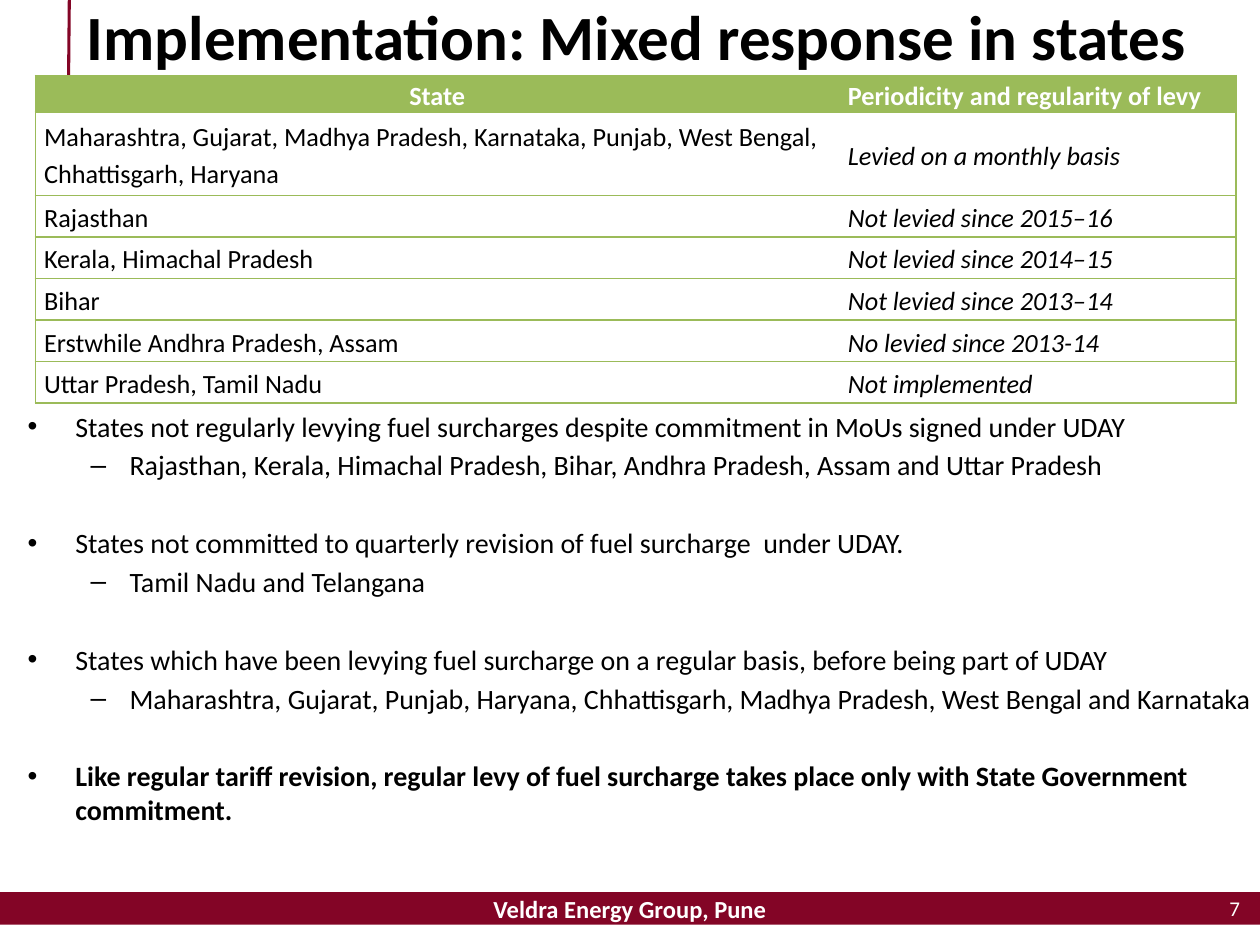
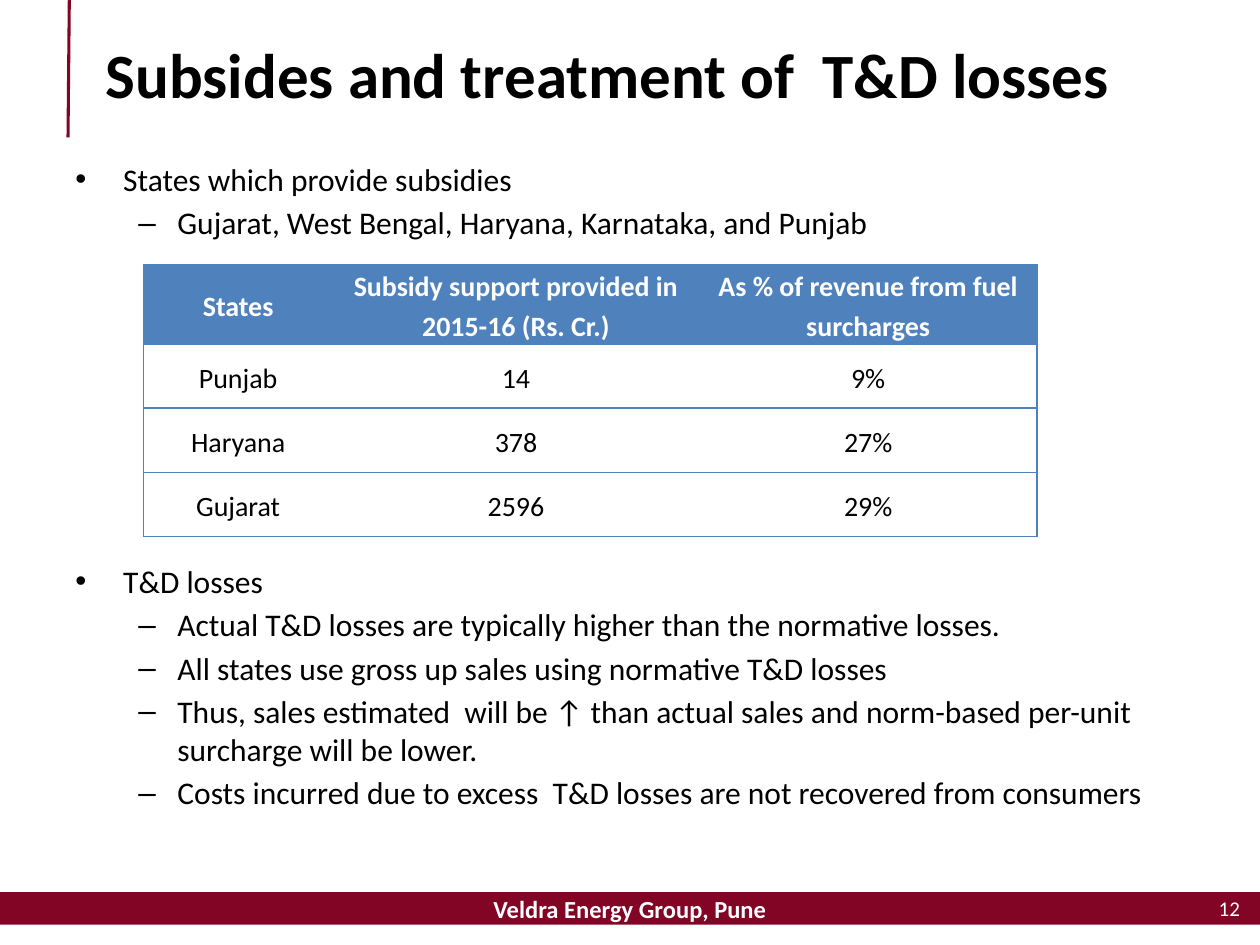
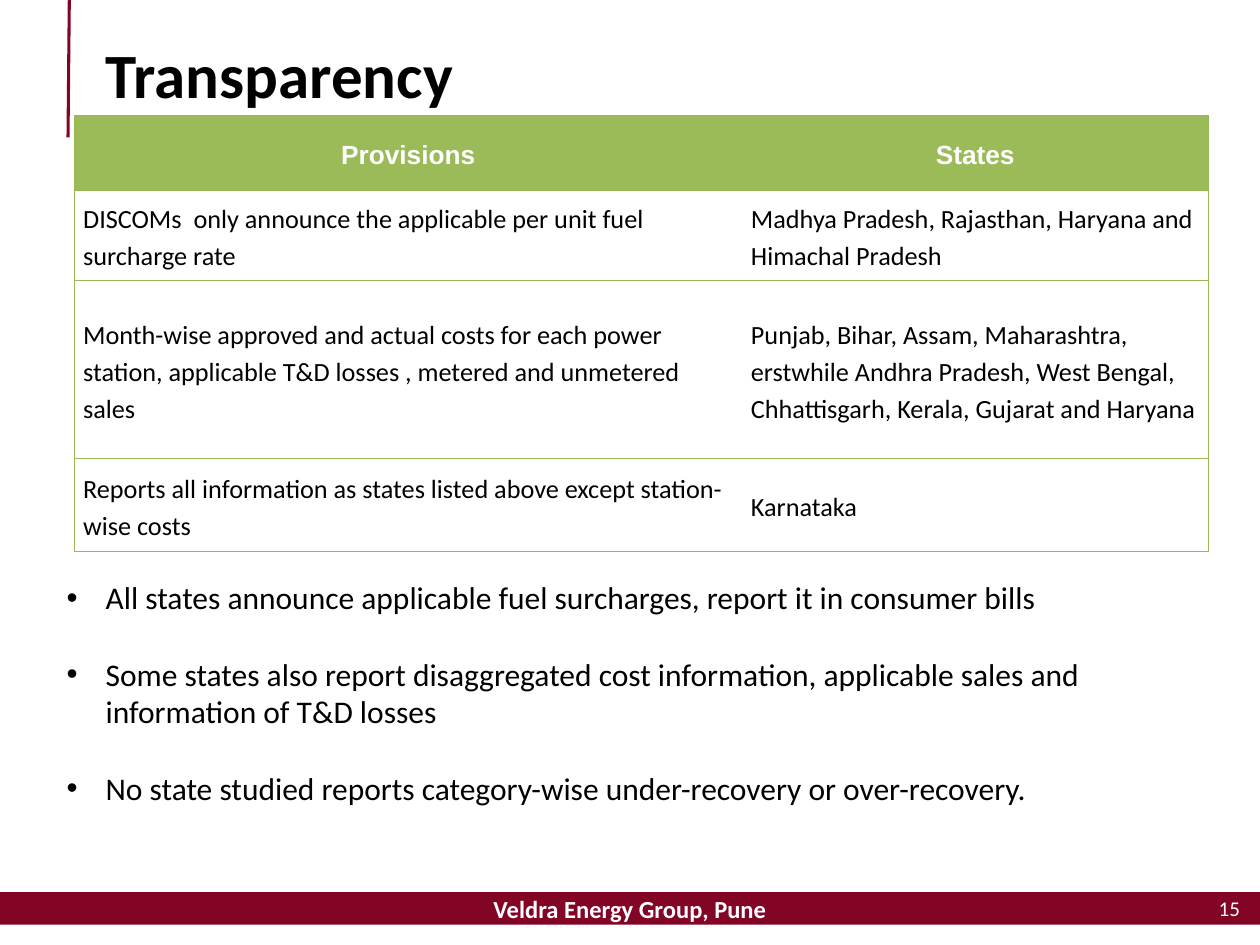
from lxml.etree import SubElement
from pptx import Presentation
from pptx.dml.color import RGBColor
from pptx.enum.shapes import MSO_CONNECTOR, MSO_SHAPE
from pptx.enum.text import MSO_ANCHOR, MSO_AUTO_SIZE, PP_ALIGN
from pptx.oxml.ns import qn
from pptx.util import Inches, Pt

MAROON = RGBColor(0x83, 0x05, 0x26)
GREEN = RGBColor(0x9B, 0xBB, 0x59)
DARK_GREEN = RGBColor(0x98, 0xB9, 0x55)
BLUE = RGBColor(0x4F, 0x81, 0xBD)
WHITE = RGBColor(0xFF, 0xFF, 0xFF)
BLACK = RGBColor(0, 0, 0)

LEFT, CENTER, RIGHT = PP_ALIGN.LEFT, PP_ALIGN.CENTER, PP_ALIGN.RIGHT
WIDTH, HEIGHT = 10, 7.5
FOOTER = "Veldra Energy Group, Pune"
LINE_HEIGHT, SPACE_SHARE = 1.22, 0.18
TITLE_PLACE = (0.74, 0.3, 8.41, 0.56)
LEVELS = [("•", 0.38, 0.38), ("–", 0.81, 0.31)]
NOTE_LEVELS = [("•", 0.31, 0.31)]

SLIDES = [
    {
        "title": "Implementation: Mixed response in states",
        "title_place": (0.59, 0, 9.14, 0.56),
        "number": 7,
        "table": {
            "place": (0.28, 0.6),
            "columns": [6.38, 3.15],
            "heights": [0.29, 0.66] + [0.33] * 5,
            "fill": GREEN, "border": GREEN, "border_width": 1, "size": 15,
            "header_align": [CENTER, LEFT], "align": LEFT, "italic_column": 1,
            "rows": [
                ("State", "Periodicity and regularity of levy"),
                ("Maharashtra, Gujarat, Madhya Pradesh, Karnataka, Punjab, West Bengal, "
                 "Chhattisgarh, Haryana", "Levied on a monthly basis"),
                ("Rajasthan", "Not levied since 2015–16"),
                ("Kerala, Himachal Pradesh", "Not levied since 2014–15"),
                ("Bihar", "Not levied since 2013–14"),
                ("Erstwhile Andhra Pradesh, Assam", "No levied since 2013-14"),
                ("Uttar Pradesh, Tamil Nadu", "Not implemented"),
            ],
        },
        "lists": [{
            "place": (0.12, 3.2, 9.88, 3.74), "size": 16, "group_gap": 25.3,
            "items": [
                (0, "States not regularly levying fuel surcharges despite commitment "
                    "in MoUs signed under UDAY"),
                (1, "Rajasthan, Kerala, Himachal Pradesh, Bihar, Andhra Pradesh, "
                    "Assam and Uttar Pradesh"),
                (0, "States not committed to quarterly revision of fuel surcharge  under UDAY."),
                (1, "Tamil Nadu and Telangana"),
                (0, "States which have been levying fuel surcharge on a regular basis, "
                    "before being part of UDAY"),
                (1, "Maharashtra, Gujarat, Punjab, Haryana, Chhattisgarh, Madhya Pradesh, "
                    "West Bengal and Karnataka"),
                (0, "Like regular tariff revision, regular levy of fuel surcharge takes place "
                    "only with State Government commitment."),
            ],
            "bold_last": True,
        }],
    },
    {
        "title": "Subsides and treatment of  T&D losses",
        "number": 12,
        "table": {
            "place": (1.14, 2.1),
            "columns": [1.5, 2.91, 2.68],
            "heights": [0.63] + [0.51] * 3,
            "fill": BLUE, "border": BLUE, "border_width": 1, "size": 16,
            "header_align": [CENTER] * 3, "align": CENTER,
            "rows": [
                ("States", "Subsidy support provided in 2015-16 (Rs. Cr.)",
                 "As % of revenue from fuel surcharges"),
                ("Punjab", "14", "9%"),
                ("Haryana", "378", "27%"),
                ("Gujarat", "2596", "29%"),
            ],
        },
        "lists": [
            {
                "place": (0.5, 1.22, 9, 0.85), "size": 18,
                "items": [
                    (0, "States which provide subsidies"),
                    (1, "Gujarat, West Bengal, Haryana, Karnataka, and Punjab"),
                ],
            },
            {
                "place": (0.5, 4.41, 9, 2.29), "size": 18,
                "items": [
                    (0, "T&D losses"),
                    (1, "Actual T&D losses are typically higher than the normative losses."),
                    (1, "All states use gross up sales using normative T&D losses"),
                    (1, "Thus, sales estimated  will be ↑ than actual sales and norm-based "
                        "per-unit surcharge will be lower."),
                    (1, "Costs incurred due to excess  T&D losses are not recovered "
                        "from consumers"),
                ],
            },
        ],
    },
    {
        "title": "Transparency",
        "number": 15,
        "table": {
            "place": (0.59, 0.92),
            "columns": [5.3, 3.7],
            "heights": [0.59, 0.72, 1.41, 0.74],
            "fill": GREEN, "border": DARK_GREEN, "border_width": 0.75, "size": 15,
            "header_align": [CENTER] * 2, "align": LEFT, "header_font": "Arial",
            "rows": [
                ("Provisions", "States"),
                ("DISCOMs  only announce the applicable per unit fuel surcharge rate",
                 "Madhya Pradesh, Rajasthan, Haryana and Himachal Pradesh"),
                ("Month-wise approved and actual costs for each power station, applicable "
                 "T&D losses , metered and unmetered sales",
                 "Punjab, Bihar, Assam, Maharashtra, erstwhile Andhra Pradesh, West Bengal, "
                 "Chhattisgarh, Kerala, Gujarat and Haryana"),
                ("Reports all information as states listed above except station-wise costs",
                 "Karnataka"),
            ],
        },
        "lists": [{
            "place": (0.43, 4.54, 8.98, 2.3), "size": 18, "group_gap": 22,
            "levels": NOTE_LEVELS,
            "items": [
                (0, "All states announce applicable fuel surcharges, report it in consumer bills"),
                (0, "Some states also report disaggregated cost information, applicable sales "
                    "and information of T&D losses"),
                (0, "No state studied reports category-wise under-recovery or over-recovery."),
            ],
        }],
    },
]


def write(para, text, size=16, color=BLACK, bold=False, italic=False, font="Calibri",
          align=LEFT, line_spacing=None, space_before=0, bullet=None):
    if bullet:
        mark, margin, hanging = bullet
        properties = para._p.get_or_add_pPr()
        properties.set("marL", str(Inches(margin)))
        properties.set("indent", str(-Inches(hanging)))
        SubElement(properties, qn("a:buFont"), typeface="Arial")
        SubElement(properties, qn("a:buChar"), char=mark)
    para.alignment = align
    if line_spacing:
        para.line_spacing = line_spacing
    if space_before:
        para.space_before = Pt(space_before)
    span = para.add_run()
    span.text = text
    span.font.name = font
    span.font.size = Pt(size)
    span.font.bold = bold
    span.font.italic = italic
    span.font.color.rgb = color


def add_box(page, place):
    box = page.shapes.add_textbox(*map(Inches, place))
    box.text_frame.word_wrap = True
    return box.text_frame


def add_frame(page, number):
    band = page.shapes.add_shape(MSO_SHAPE.RECTANGLE, 0, Inches(7.08),
                                 Inches(WIDTH), Inches(0.26))
    band.shadow.inherit = False
    band.fill.solid()
    band.fill.fore_color.rgb = MAROON
    band.line.fill.background()
    band.text_frame.word_wrap = False
    band.text_frame.vertical_anchor = MSO_ANCHOR.MIDDLE
    write(band.text_frame.paragraphs[0], FOOTER, size=14, color=WHITE, bold=True, align=CENTER)

    rule = page.shapes.add_connector(MSO_CONNECTOR.STRAIGHT, Inches(0.55), 0,
                                     Inches(0.54), Inches(1.09))
    rule.line.color.rgb = MAROON
    rule.line.width = Pt(1.75)
    SubElement(rule._element.spPr, qn("a:effectLst"))

    number_frame = add_box(page, (7.61, 7.01, 2.33, 0.4))
    number_frame.vertical_anchor = MSO_ANCHOR.MIDDLE
    write(number_frame.paragraphs[0], str(number), size=12, color=WHITE, align=RIGHT)


def set_title(page, text, place):
    title = page.shapes.title
    title.left, title.top, title.width, title.height = map(Inches, place)
    title.text_frame.auto_size = MSO_AUTO_SIZE.NONE
    title.text_frame.vertical_anchor = MSO_ANCHOR.MIDDLE
    write(title.text_frame.paragraphs[0], text, size=36, bold=True)


def set_borders(cell, color, width, edges):
    properties = cell._tc.get_or_add_tcPr()
    for edge in "LRTB":
        line = SubElement(properties, qn(f"a:ln{edge}"), w=str(Pt(width)))
        if edge in edges:
            fill = SubElement(line, qn("a:solidFill"))
            SubElement(fill, qn("a:srgbClr"), val=str(color))
        else:
            SubElement(line, qn("a:noFill"))


def add_grid(page, rows, place, columns, heights, fill, border, border_width, size,
             header_align, align, header_font="Calibri", italic_column=None):
    sizes = (*place, sum(columns), sum(heights))
    table = page.shapes.add_table(len(rows), len(columns), *map(Inches, sizes)).table
    for column, width in zip(table.columns, columns):
        column.width = Inches(width)
    for row, height in zip(table.rows, heights):
        row.height = Inches(height)
    for row_index, row in enumerate(rows):
        header = row_index == 0
        for column_index, text in enumerate(row):
            cell = table.cell(row_index, column_index)
            edges = "TB"
            if column_index == 0:
                edges += "L"
            if column_index == len(columns) - 1:
                edges += "R"
            set_borders(cell, border, border_width, edges)
            cell.fill.solid()
            cell.fill.fore_color.rgb = fill if header else WHITE
            cell.margin_left = cell.margin_right = Inches(0.07)
            cell.margin_top = cell.margin_bottom = 0
            cell.vertical_anchor = MSO_ANCHOR.MIDDLE
            write(cell.text_frame.paragraphs[0], text, size=size, bold=header,
                  color=WHITE if header else BLACK,
                  font=header_font if header else "Calibri",
                  italic=not header and column_index == italic_column,
                  align=header_align[column_index] if header else align,
                  line_spacing=1.15)


def add_list(page, place, size, items, group_gap=0, levels=LEVELS, bold_last=False):
    frame = add_box(page, place)
    frame.margin_right = 0
    for index, (level, text) in enumerate(items):
        para = frame.add_paragraph() if index else frame.paragraphs[0]
        gap = group_gap if level == 0 else round(size * SPACE_SHARE, 1)
        write(para, text, size=size, bullet=levels[level],
              bold=bold_last and index == len(items) - 1,
              space_before=gap if index else 0)


def main():
    deck = Presentation()
    deck.slide_width, deck.slide_height = Inches(WIDTH), Inches(HEIGHT)
    for content in SLIDES:
        page = deck.slides.add_slide(deck.slide_layouts[5])
        add_frame(page, content["number"])
        set_title(page, content["title"], content.get("title_place", TITLE_PLACE))
        for bullets in content["lists"]:
            add_list(page, **bullets)
        add_grid(page, **content["table"])
    deck.save("out.pptx")


if __name__ == "__main__":
    main()
